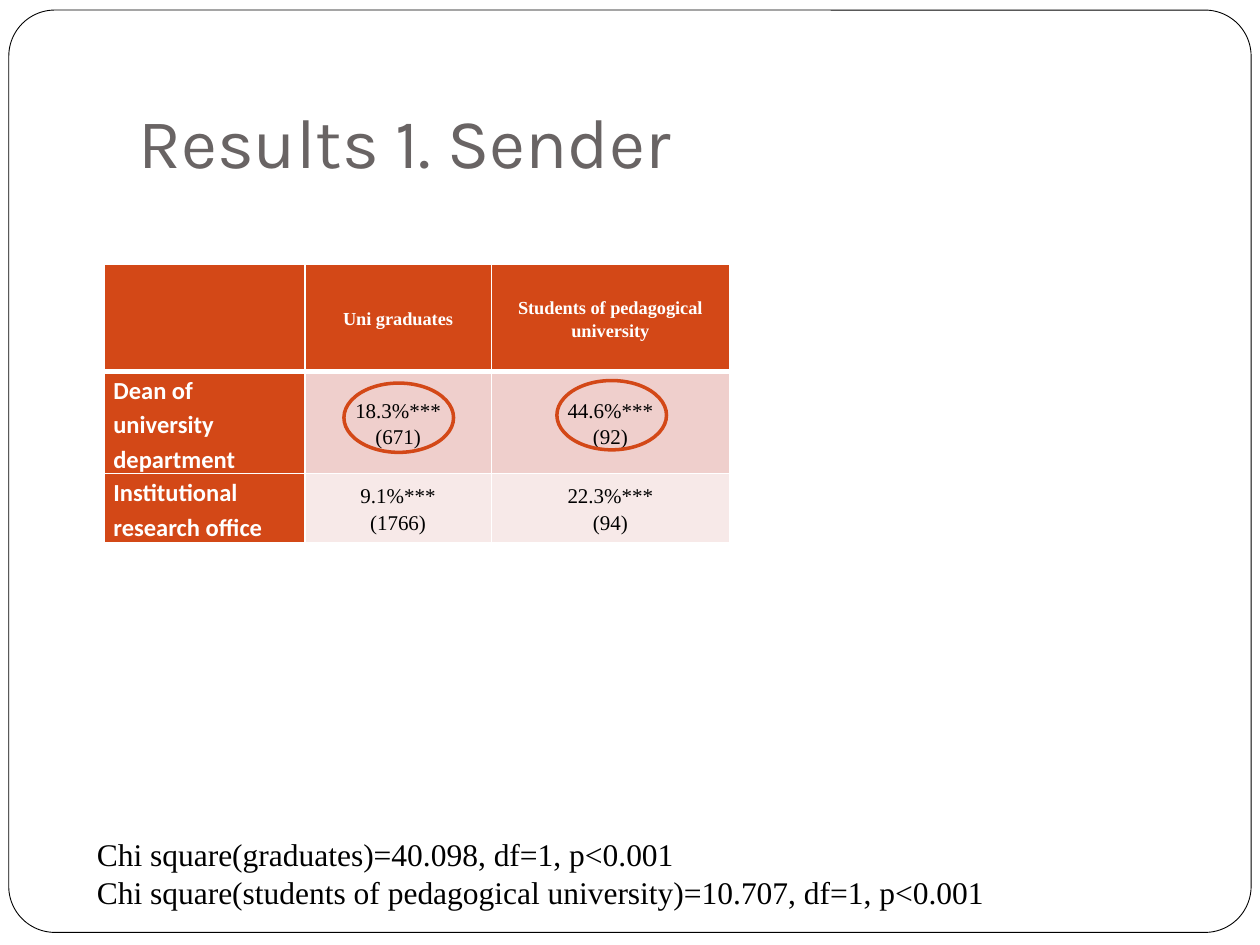
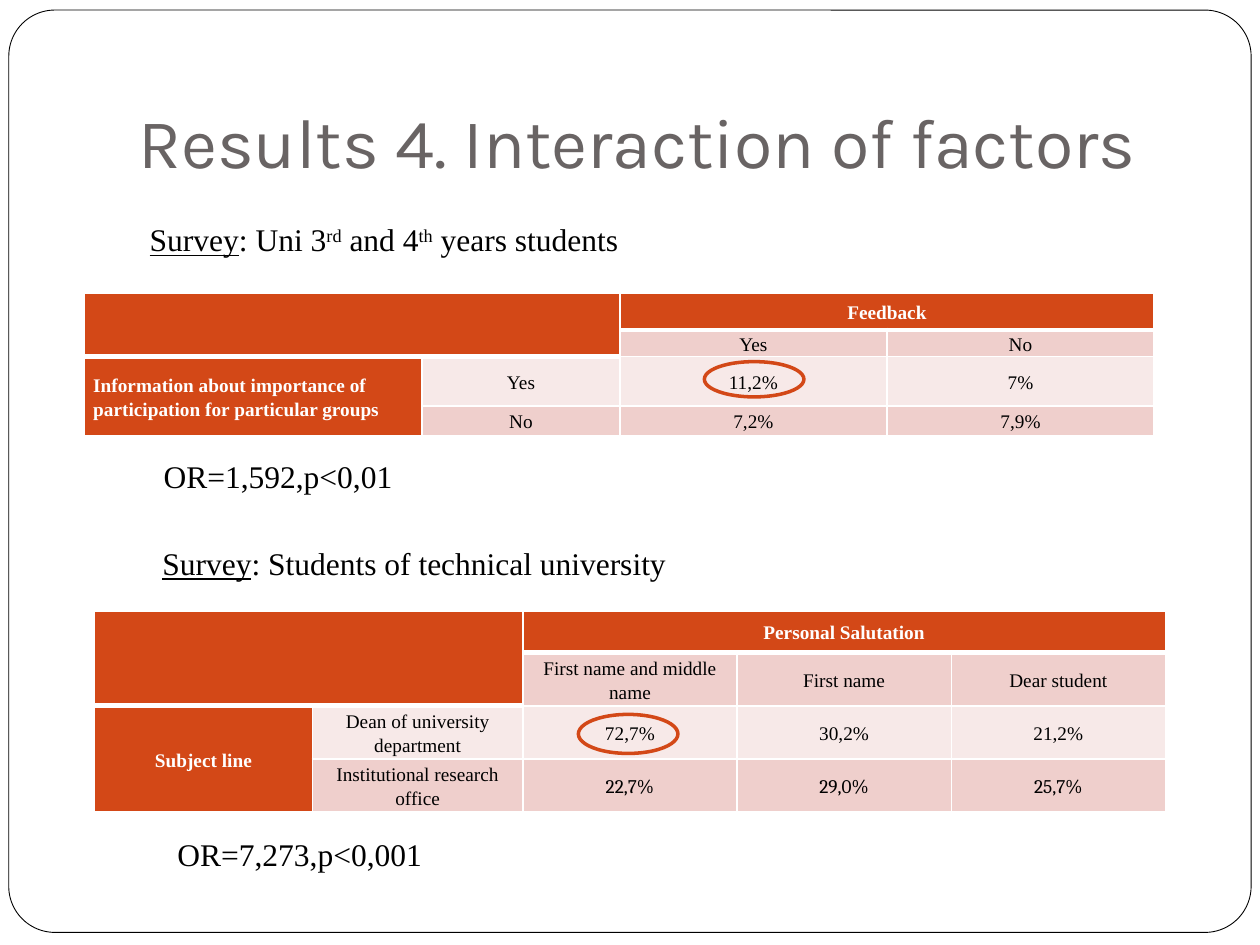
"""Build two slides of survey results with tables and circled values."""
from lxml import etree
from pptx import Presentation
from pptx.dml.color import RGBColor
from pptx.enum.shapes import MSO_SHAPE
from pptx.enum.text import MSO_ANCHOR, MSO_AUTO_SIZE, PP_ALIGN
from pptx.oxml.ns import qn
from pptx.util import Inches, Pt

LEFT, CENTER = PP_ALIGN.LEFT, PP_ALIGN.CENTER
MIDDLE, BOTTOM = MSO_ANCHOR.MIDDLE, MSO_ANCHOR.BOTTOM
FIT_SHAPE = MSO_AUTO_SIZE.SHAPE_TO_FIT_TEXT
ROUNDED, OVAL = MSO_SHAPE.ROUNDED_RECTANGLE, MSO_SHAPE.OVAL

ORANGE, WHITE, BLACK, GREY = "D34817", "FFFFFF", "000000", "696464"
BANDS = ("F7E9E8", "EFCFCC")
SERIF, TITLE_FONT = "Times New Roman", "Karla"
UNDERLINE, SUPERSCRIPT = {"underline": True}, {"raised": True}

SLIDES = [
    {
        "title": "Results 1. Sender",
        "tables": [
            {
                "at": (0.83, 2.1),
                "columns": (1.59, 1.48, 1.89),
                "rows": (0.85, 0.81, 0.55),
                "header": {"size": 10.5},
                "label": {"size": 14, "font": "Calibri", "align": LEFT},
                "body": {"size": 12},
                "merges": [],
                "cells": [
                    ["", "Uni graduates", "Students of pedagogical university"],
                    ["Dean of university department", "18.3%***\n(671)", "44.6%***\n(92)"],
                    ["Institutional research office", "9.1%***\n(1766)", "22.3%***\n(94)"],
                ],
            },
        ],
        "notes": [
            ((0.67, 6.58, 7.99, 0.71), [
                [("Chi square(graduates)=40.098, df=1, p<0.001", {})],
                [("Chi square(students of pedagogical university)=10.707, df=1, p<0.001", {})],
            ]),
        ],
        "rings": [(2.73, 3.04, 0.87, 0.55), (4.42, 3.02, 0.87, 0.55)],
    },
    {
        "title": "Results 4. Interaction of factors",
        "tables": [
            {
                "at": (0.67, 2.33),
                "columns": (2.68, 1.57, 2.12, 2.12),
                "rows": (0.29, 0.21, 0.39, 0.24),
                "header": {"size": 11},
                "label": {"size": 11, "align": LEFT},
                "body": {"size": 11},
                "merges": [(0, 0, 1, 1), (0, 2, 0, 3), (2, 0, 3, 0)],
                "cells": [
                    ["", "", "Feedback", ""],
                    ["", "", "Yes", "No"],
                    ["Information about importance of participation for particular groups",
                     "Yes", "11,2%", "7%"],
                    ["", "No", "7,2%", "7,9%"],
                ],
            },
            {
                "at": (0.75, 4.85),
                "columns": (1.73, 1.67, 1.7, 1.7, 1.7),
                "rows": (0.33, 0.42, 0.42, 0.42),
                "header": {"size": 11},
                "label": {"size": 11},
                "body": {"size": 11},
                "merges": [(0, 0, 1, 1), (0, 2, 0, 4), (2, 0, 3, 0)],
                "fonts": {(3, column): "Cambria" for column in (2, 3, 4)},
                "cells": [
                    ["", "", "Personal Salutation", "", ""],
                    ["", "", "First name and middle name", "First name", "Dear student"],
                    ["Subject line", "Dean of university department", "72,7%", "30,2%", "21,2%"],
                    ["", "Institutional research office", "22,7%", "29,0%", "25,7%"],
                ],
            },
        ],
        "notes": [
            ((1.09, 1.7, 4.56, 0.4), [[
                ("Survey", UNDERLINE), (": Uni 3", {}), ("rd", SUPERSCRIPT),
                (" and 4", {}), ("th", SUPERSCRIPT), (" years students", {}),
            ]]),
            ((1.2, 3.58, 2.21, 0.4), [[("OR=1,592,p<0,01", {})]]),
            ((1.19, 4.27, 4.61, 0.4), [
                [("Survey", UNDERLINE), (": Students of technical university", {})],
            ]),
            ((1.31, 6.58, 2.35, 0.4), [[("OR=7,273,p<0,001", {})]]),
        ],
        "rings": [(5.59, 2.87, 0.79, 0.28), (4.59, 5.67, 0.79, 0.31)],
    },
]


def rgb(color):
    return RGBColor.from_string(color)


def inches(values):
    return [Inches(value) for value in values]


def add_span(para, text, size=18, font=SERIF, color=BLACK, bold=False,
             underline=False, raised=False):
    span = para.add_run()
    span.text = text
    span.font.size = Pt(size)
    span.font.name = font
    span.font.bold = bold
    span.font.underline = underline
    span.font.color.rgb = rgb(color)
    if raised:
        span.font._element.set("baseline", "30000")


def add_outline(page, kind, at, color, width, fill=None):
    shape = page.shapes.add_shape(kind, *inches(at))
    shape.shadow.inherit = False
    shape.line.color.rgb = rgb(color)
    shape.line.width = Pt(width)
    if fill:
        shape.fill.solid()
        shape.fill.fore_color.rgb = rgb(fill)
    else:
        shape.fill.background()
    return shape


def add_base(page, title):
    frame = add_outline(page, ROUNDED, (0.07, 0.08, 9.86, 7.32), BLACK, 0.5, WHITE)
    frame.adjustments[0] = 0.05
    box = page.shapes.add_textbox(*inches((1, 0.3, 8.5, 1.25))).text_frame
    box.word_wrap = True
    box.vertical_anchor = BOTTOM
    box.margin_bottom = Inches(0.1)
    add_span(box.paragraphs[0], title, size=40, font=TITLE_FONT, color=GREY)


def add_note(page, at, lines):
    box = page.shapes.add_textbox(*inches(at)).text_frame
    box.word_wrap = False
    box.auto_size = FIT_SHAPE
    for number, spans in enumerate(lines):
        para = box.add_paragraph() if number else box.paragraphs[0]
        for text, style in spans:
            add_span(para, text, **style)


def add_borders(cell, bottom):
    properties = cell._tc.get_or_add_tcPr()
    for side, width in (("L", 1), ("R", 1), ("T", 1), ("B", bottom)):
        line = etree.SubElement(properties, qn(f"a:ln{side}"), w=str(Pt(width)))
        fill = etree.SubElement(line, qn("a:solidFill"))
        etree.SubElement(fill, qn("a:srgbClr"), val=WHITE)


def fill_cell(cell, text, fill, bottom=1, align=CENTER, **style):
    cell.margin_left = cell.margin_right = Inches(0.07)
    cell.margin_top = cell.margin_bottom = 0
    cell.vertical_anchor = MIDDLE
    add_borders(cell, bottom)
    cell.fill.solid()
    cell.fill.fore_color.rgb = rgb(fill)
    for number, line in enumerate(text.split("\n")):
        para = cell.text_frame.add_paragraph() if number else cell.text_frame.paragraphs[0]
        para.alignment = align
        para.line_spacing = 1.15
        if line:
            add_span(para, line, **style)
        else:
            etree.SubElement(para._p, qn("a:endParaRPr"), sz="1000")


def add_results(page, data):
    columns, rows = data["columns"], data["rows"]
    place = inches((*data["at"], sum(columns), sum(rows)))
    table = page.shapes.add_table(len(rows), len(columns), *place).table
    for column, width in zip(table.columns, columns):
        column.width = Inches(width)
    for row, height in zip(table.rows, rows):
        row.height = Inches(height)
    corner = next((merge for merge in data["merges"] if merge[:2] == (0, 0)), (0, 0, 0, 0))
    for r, texts in enumerate(data["cells"]):
        for c, text in enumerate(texts):
            heading = r == 0 or (r <= corner[2] and c <= corner[3])
            if heading:
                style = {"fill": ORANGE, "color": WHITE, "bold": True, "bottom": 3, **data["header"]}
            elif c == 0:
                style = {"fill": ORANGE, "color": WHITE, "bold": True, **data["label"]}
            else:
                font = data.get("fonts", {}).get((r, c), SERIF)
                style = {"fill": BANDS[r % 2], "font": font, **data["body"]}
            fill_cell(table.cell(r, c), text, **style)
    for top, left, bottom, right in data["merges"]:
        table.cell(top, left).merge(table.cell(bottom, right))


def main():
    deck = Presentation()
    deck.slide_width, deck.slide_height = Inches(10), Inches(7.5)
    for content in SLIDES:
        page = deck.slides.add_slide(deck.slide_layouts[6])
        add_base(page, content["title"])
        for data in content["tables"]:
            add_results(page, data)
        for at, lines in content["notes"]:
            add_note(page, at, lines)
        for at in content["rings"]:
            add_outline(page, OVAL, at, ORANGE, 2)
    deck.save("out.pptx")


if __name__ == "__main__":
    main()
